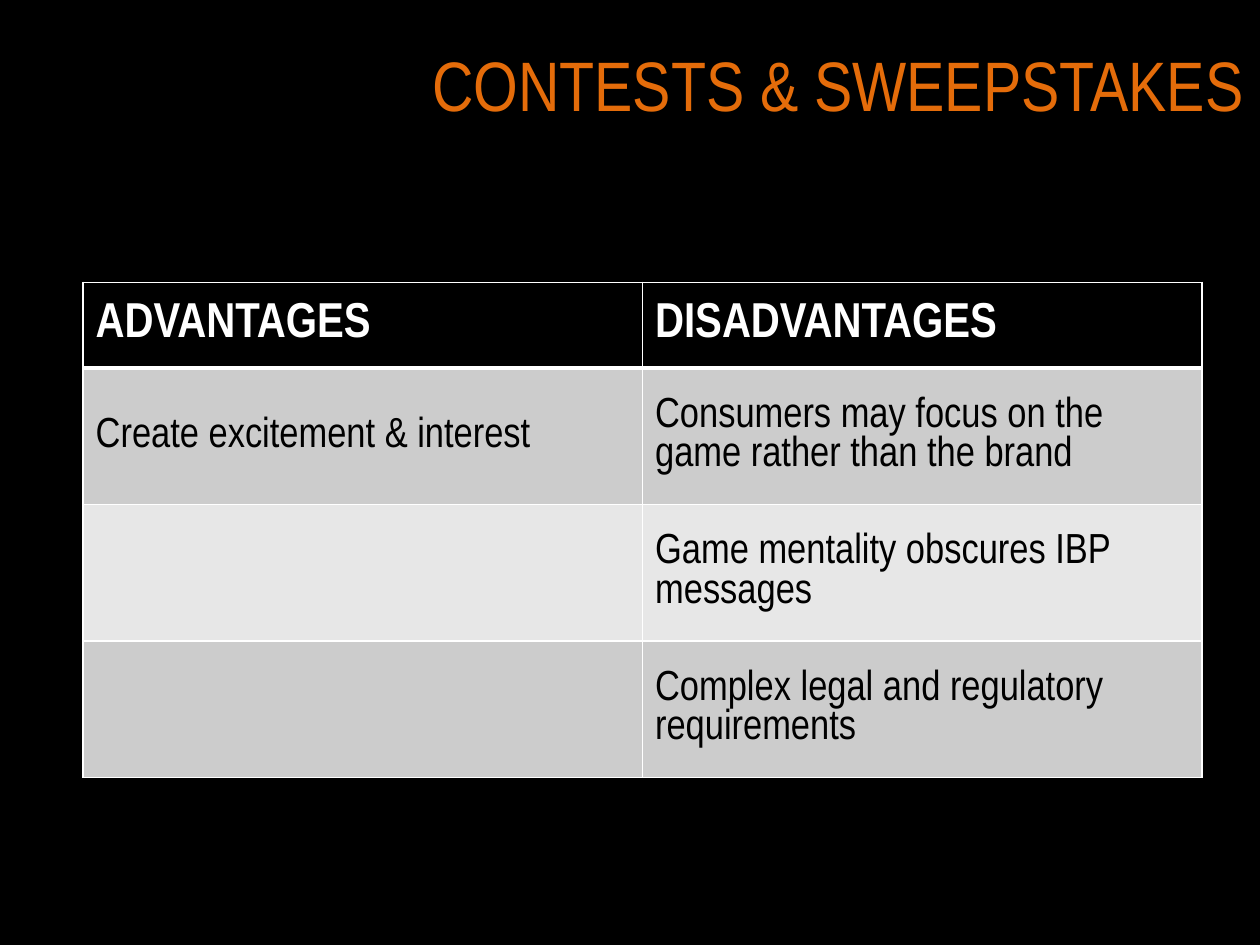
from dataclasses import dataclass

import lxml.etree
import pptx
import pptx.dml.color
import pptx.enum.text
import pptx.oxml.ns
import pptx.util

Inches = pptx.util.Inches
Pt = pptx.util.Pt


@dataclass(frozen=True)
class Theme:
    """Colours, font and type sizes of the slide."""
    font: str = "Arial Narrow"
    background: str = "000000"
    accent: str = "E46C0A"
    light: str = "FFFFFF"
    dark: str = "000000"
    bands: tuple = ("CCCCCC", "E7E7E7")
    title_size: int = 40
    header_size: int = 28
    body_size: int = 24
    thin: int = 1
    thick: int = 3


THEME = Theme()
TITLE = "CONTESTS & SWEEPSTAKES"
ROWS = [
    ("ADVANTAGES", "DISADVANTAGES"),
    ("Create excitement & interest", "Consumers may focus on the game rather than the brand"),
    ("", "Game mentality obscures IBP messages"),
    ("", "Complex legal and regulatory requirements"),
]


def color(value):
    """Turn a hex string into a colour."""
    return pptx.dml.color.RGBColor.from_string(value)


def style_paragraph(paragraph, size, text_color, bold=False):
    """Set the font of one paragraph."""
    font = paragraph.font
    font.name, font.size, font.bold = THEME.font, Pt(size), bold
    font.color.rgb = color(text_color)


def set_borders(cell, widths):
    """Draw the left, right, top and bottom borders of a cell."""
    properties = cell._tc.get_or_add_tcPr()
    qn = pptx.oxml.ns.qn
    for index, (side, width) in enumerate(zip("LRTB", widths)):
        line = lxml.etree.Element(qn(f"a:ln{side}"), w=str(Pt(width)))
        fill = lxml.etree.SubElement(line, qn("a:solidFill"))
        lxml.etree.SubElement(fill, qn("a:srgbClr"), val=THEME.light)
        properties.insert(index, line)


def add_title(slide, left, top, width, height):
    """Place the right-aligned title in its box."""
    frame = slide.shapes.add_textbox(left, top, width, height).text_frame
    frame.word_wrap = True
    frame.vertical_anchor = pptx.enum.text.MSO_ANCHOR.MIDDLE
    paragraph = frame.paragraphs[0]
    paragraph.text = TITLE
    paragraph.alignment = pptx.enum.text.PP_ALIGN.RIGHT
    style_paragraph(paragraph, THEME.title_size, THEME.accent)


def fill_cell(cell, text, row_index):
    """Write and style one table cell according to its row."""
    header = row_index == 0
    cell.vertical_anchor = pptx.enum.text.MSO_ANCHOR.MIDDLE
    cell.fill.solid()
    cell.fill.fore_color.rgb = color(
        THEME.background if header else THEME.bands[(row_index - 1) % 2])
    top = THEME.thick if row_index == 1 else THEME.thin
    bottom = THEME.thick if header else THEME.thin
    set_borders(cell, (THEME.thin, THEME.thin, top, bottom))
    paragraph = cell.text_frame.paragraphs[0]
    paragraph.text = text
    style_paragraph(paragraph, THEME.header_size if header else THEME.body_size,
                    THEME.light if header else THEME.dark, header)


def add_comparison(slide, left, top, width, height, header_height):
    """Place the comparison table with equal columns and body rows."""
    table = slide.shapes.add_table(
        len(ROWS), len(ROWS[0]), left, top, width, height).table
    body_height = (height - header_height) // (len(ROWS) - 1)
    for row_index, texts in enumerate(ROWS):
        table.rows[row_index].height = body_height if row_index else header_height
        for column_index, text in enumerate(texts):
            fill_cell(table.cell(row_index, column_index), text, row_index)


def main():
    """Build the slide and save it."""
    presentation = pptx.Presentation()
    presentation.slide_width, presentation.slide_height = Inches(10), Inches(7.5)
    slide = presentation.slides.add_slide(presentation.slide_layouts[6])
    slide.background.fill.solid()
    slide.background.fill.fore_color.rgb = color(THEME.background)
    add_title(slide, Inches(0.59), Inches(0), Inches(9.38), Inches(1.33))
    add_comparison(slide, Inches(0.66), Inches(2.24), Inches(8.88), Inches(3.93),
                   Inches(0.68))
    presentation.save("out.pptx")


if __name__ == "__main__":
    main()
